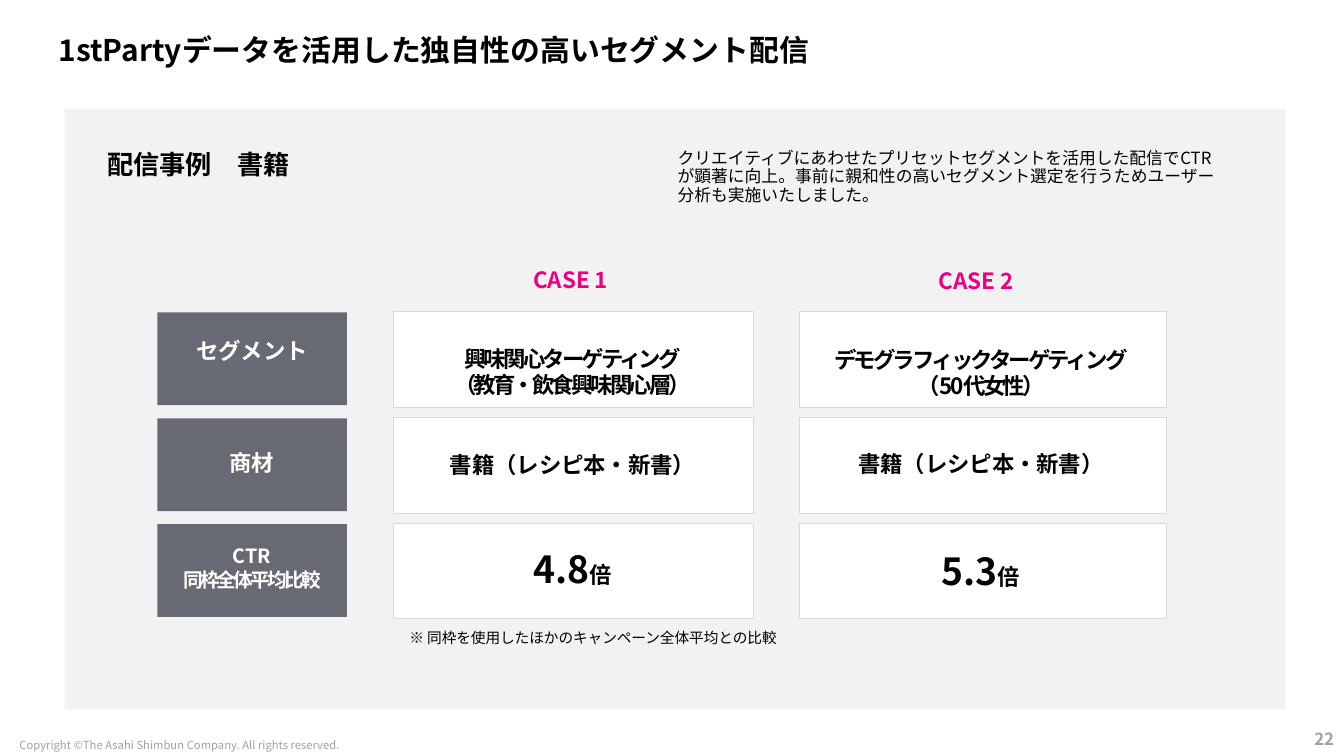
from lxml import etree
from pptx import Presentation
from pptx.dml.color import RGBColor
from pptx.enum.shapes import MSO_SHAPE as SHAPE
from pptx.enum.text import MSO_ANCHOR as ANCHOR, PP_ALIGN as ALIGN
from pptx.oxml.ns import qn
from pptx.util import Emu, Pt

PX = 9144  # 100 px to the inch
FONT = "Noto Sans CJK JP"
COLORS = {"black": "000000", "white": "FFFFFF", "panel": "F2F2F2", "label": "676A73",
          "border": "D8D9DC", "accent": "EB0083", "muted": "9FA1A8"}

TITLE = "1stPartyデータを活用した独自性の高いセグメント配信"
SUMMARY = ("クリエイティブにあわせたプリセットセグメントを活用した配信でCTRが顕著に向上。"
           "事前に親和性の高いセグメント選定を行うためユーザー分析も実施いたしました。")
HEADING = "配信事例　書籍"
NOTE = "※\u00a0同枠を使用したほかのキャンペーン全体平均との比較"
COPYRIGHT = "Copyright ©The Asahi Shimbun Company. All rights reserved."
PAGE = "22"

# A line is a list of runs; a run is (text, format).
TIGHT = {"spacing": -2}
BIG = {"size": 26.67}
PRODUCT = [[("書籍（レシピ本・新書）", {})]]
# (text top, height, lines) for each row
LABELS = [
    (330, 37, [[("セグメント", {})]]),
    (439, 40, [[("商材", {})]]),
    (535, 57, [[("CTR", {"size": 14})], [("同枠全体平均比較", {"size": 14, **TIGHT})]]),
]
CASES = [
    {"name": "CASE 1", "name_box": (390, 251, 352, 52), "left": 390, "width": 357,
     "text_left": 390, "text_width": 356,
     "cells": [
         (335, 67, [[("興味関心ターゲティング", TIGHT)], [("（教育・飲食興味関心層）", TIGHT)]]),
         (441, 40, PRODUCT),
         (535, 58, [[("4.8", BIG), ("倍", {})]])]},
    {"name": "CASE 2", "name_box": (788, 252, 360, 53), "left": 793, "width": 364,
     "text_left": 791, "text_width": 364,
     "cells": [
         (336, 67, [[("デモグラフィックターゲティング", TIGHT)], [("（50代女性）", TIGHT)]]),
         (440, 40, PRODUCT),
         (537, 58, [[("5.3", BIG), ("倍", {})]])]},
]
ROW_TOP, ROW_PITCH, CELL_H = 309, 105, 95
LABEL_LEFT, LABEL_W, LABEL_H = 156, 188, 92

prs = Presentation()
prs.slide_width, prs.slide_height = Emu(1333 * PX), Emu(750 * PX)
s = prs.slides.add_slide(prs.slide_layouts[1])


def emu(box):
    return [Emu(v * PX) for v in box]


def rgb(name):
    return RGBColor.from_string(COLORS[name])


def rect(box, fill, line=None):
    sp = s.shapes.add_shape(SHAPE.RECTANGLE, *emu(box))
    sp.shadow.inherit = False
    sp.fill.solid()
    sp.fill.fore_color.rgb = rgb(fill)
    if line:
        sp.line.color.rgb = rgb(line)
        sp.line.width = Pt(0.75)
    else:
        sp.line.fill.background()
    return sp


def add_run(p, text, size, color, bold, spacing=0):
    r = p.add_run()
    r.text = text
    r.font.name, r.font.size, r.font.bold = FONT, Pt(size), bold
    r.font.color.rgb = rgb(color)
    rPr = r._r.get_or_add_rPr()
    etree.SubElement(rPr, qn("a:ea")).set("typeface", FONT)
    if spacing:
        rPr.set("spc", str(spacing * 100))


def put_text(box, content, holder=None, size=16, color="black", bold=False,
             align=ALIGN.LEFT, anchor=ANCHOR.TOP, inset=(10, 5), line=1.0):
    """Write a string, or lines of runs, into a placeholder or a new text box."""
    sp = holder or s.shapes.add_textbox(*emu(box))
    sp.left, sp.top, sp.width, sp.height = emu(box)
    tf = sp.text_frame
    tf.word_wrap, tf.vertical_anchor = True, anchor
    tf.margin_left = tf.margin_right = Emu(inset[0] * PX)
    tf.margin_top = tf.margin_bottom = Emu(inset[1] * PX)
    lines = [[(content, {})]] if isinstance(content, str) else content
    for i, runs in enumerate(lines):
        p = tf.add_paragraph() if i else tf.paragraphs[0]
        if holder:
            pPr = p._p.get_or_add_pPr()
            pPr.set("marL", "0")
            pPr.set("indent", "0")
            etree.SubElement(pPr, qn("a:buNone"))
        p.alignment, p.line_spacing, p.space_before = align, line, Pt(0)
        for text, fmt in runs:
            add_run(p, text, **{"size": size, "color": color, "bold": bold, **fmt})


panel = rect((64, 108, 1211, 596), "panel")
s.shapes.title._element.addprevious(panel._element)  # behind the placeholders
put_text((58, 39, 996, 24), TITLE, holder=s.shapes.title, size=21.33, bold=True,
         anchor=ANCHOR.MIDDLE, inset=(0, 0), line=0.9)
put_text((662, 144, 562, 77), SUMMARY, holder=s.placeholders[1], size=12, line=0.9)
put_text((97, 146, 533, 41), HEADING, size=18.67, bold=True, line=0.9)

for row, (top, height, lines) in enumerate(LABELS):
    rect((LABEL_LEFT, ROW_TOP + 1 + row * ROW_PITCH, LABEL_W, LABEL_H), "label")
    put_text((LABEL_LEFT + 1, top, LABEL_W - 2, height), lines, color="white",
             bold=True, align=ALIGN.CENTER, inset=(10, 7 if row == 1 else 5))

for case in CASES:
    put_text(case["name_box"], case["name"], color="accent", bold=True,
             align=ALIGN.CENTER, inset=(13, 13))
    for row, (top, height, lines) in enumerate(case["cells"]):
        rect((case["left"], ROW_TOP + row * ROW_PITCH, case["width"], CELL_H), "white", "border")
        put_text((case["text_left"], top, case["text_width"], height), lines,
                 bold=True, align=ALIGN.CENTER, inset=(13, 7))

put_text((393, 615, 417, 45), NOTE, size=10.5, inset=(13, 13))
put_text((9, 731, 338, 17), COPYRIGHT, size=8, color="muted", align=ALIGN.CENTER,
         anchor=ANCHOR.MIDDLE, inset=(0, 0))
put_text((1255, 716, 78, 33), PAGE, size=12, color="muted", bold=True,
         align=ALIGN.RIGHT, anchor=ANCHOR.MIDDLE)

prs.save("out.pptx")
